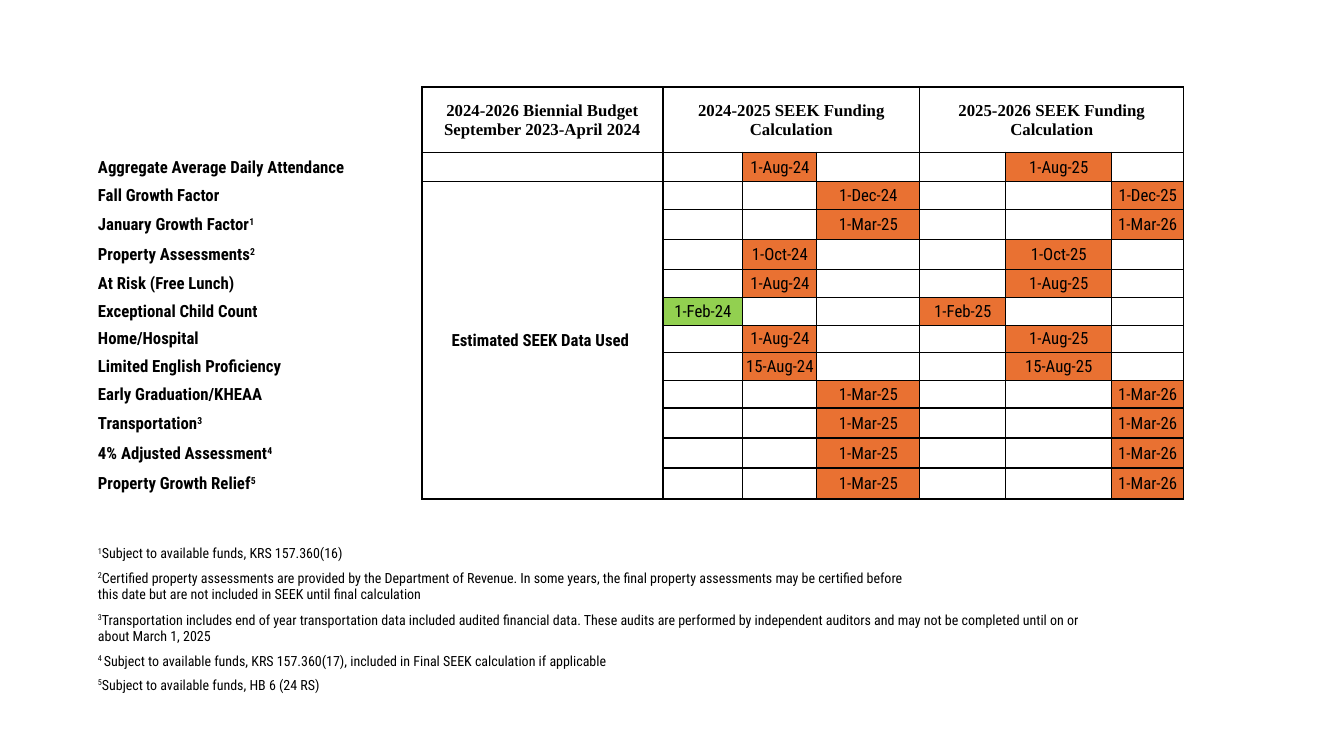
"""Build the SEEK funding calendar slide with its footnotes."""
from lxml.etree import SubElement
from pptx import Presentation
from pptx.dml.color import RGBColor
from pptx.enum.text import MSO_ANCHOR, PP_ALIGN
from pptx.oxml import parse_xml
from pptx.oxml.ns import nsdecls, qn
from pptx.util import Pt

EMU_PER_PX = 914400 / 100.8
BLACK = RGBColor(0x00, 0x00, 0x00)
ORANGE = RGBColor(0xE9, 0x71, 0x32)
GREEN = RGBColor(0x92, 0xD0, 0x50)
NO_STYLE = "{2D5ABB26-0587-4C30-8999-92F81FD0307C}"

COLS = [325, 241, 80, 74, 103, 15, 71, 19, 87, 72]
HEADER_ROWS = [27, 28]
FACTOR_ROWS = [29, 28, 30, 30, 28, 28, 27, 28, 28, 30, 30, 31]
GAP_ROWS = [21, 21]
NOTE_ROWS = [24, 42, 42, 24, 24]
ROWS = HEADER_ROWS + FACTOR_ROWS + GAP_ROWS + NOTE_ROWS
FIRST_FACTOR = len(HEADER_ROWS)
GRID_END = FIRST_FACTOR + len(FACTOR_ROWS)
FIRST_NOTE = GRID_END + len(GAP_ROWS)

HEADERS = [
    (1, 1, ["2024-2026 Biennial Budget", "September 2023-April 2024"]),
    (2, 4, ["2024-2025 SEEK Funding Calculation"]),
    (5, 9, ["2025-2026 SEEK Funding Calculation"]),
]
DATE_COLS = [(2, 5), (3, 7), (4, 9)]
FACTORS = [
    ("Aggregate Average Daily Attendance", "", 1, "1-Aug-24", "1-Aug-25"),
    ("Fall Growth Factor", "", 2, "1-Dec-24", "1-Dec-25"),
    ("January Growth Factor", "1", 2, "1-Mar-25", "1-Mar-26"),
    ("Property Assessments", "2", 1, "1-Oct-24", "1-Oct-25"),
    ("At Risk (Free Lunch)", "", 1, "1-Aug-24", "1-Aug-25"),
    ("Exceptional Child Count", "", 0, "1-Feb-24", "1-Feb-25"),
    ("Home/Hospital", "", 1, "1-Aug-24", "1-Aug-25"),
    ("Limited English Proficiency", "", 1, "15-Aug-24", "15-Aug-25"),
    ("Early Graduation/KHEAA", "", 2, "1-Mar-25", "1-Mar-26"),
    ("Transportation", "3", 2, "1-Mar-25", "1-Mar-26"),
    ("4% Adjusted Assessment", "4", 2, "1-Mar-25", "1-Mar-26"),
    ("Property Growth Relief", "5", 2, "1-Mar-25", "1-Mar-26"),
]
NOTES = [
    ("1", "Subject to available funds, KRS 157.360(16)"),
    ("2", "Certified property assessments are provided by the Department of "
          "Revenue. In some years, the final property assessments may be "
          "certified before this date but are not included in SEEK until "
          "final calculation"),
    ("3", "Transportation includes end of year transportation data included "
          "audited financial data. These audits are performed by independent "
          "auditors and may not be completed until on or about March 1, 2025"),
    ("4 ", "Subject to available funds, KRS 157.360(17), included in Final "
           "SEEK calculation if applicable"),
    ("5", "Subject to available funds, HB 6 (24 RS)"),
]
PAIRS = [(5, 6), (7, 8)]
NOTE_SPANS = [
    PAIRS,
    [(0, 4)] + PAIRS,
    [(0, 8)],
    [(0, 1), (4, 5), (6, 7)],
    [(4, 5), (6, 7)],
]


def px(n):
    return round(n * EMU_PER_PX)


class Deck:
    """Slide builder that holds the text styles and the current slide."""

    STYLES = {
        "header": {"name": "Times New Roman", "size": Pt(12), "bold": True},
        "label": {"name": "Roboto Condensed", "size": Pt(12), "bold": True},
        "date": {"name": "Roboto Condensed", "size": Pt(12), "bold": False},
        "note": {"name": "Roboto Condensed", "size": Pt(10), "bold": False},
    }
    CELL = {"margin_left": px(1), "margin_right": px(1), "margin_top": px(1),
            "margin_bottom": 0, "vertical_anchor": MSO_ANCHOR.MIDDLE}

    def __init__(self, width, height):
        self.prs = Presentation()
        self.prs.slide_width, self.prs.slide_height = px(width), px(height)
        self.slide = self.prs.slides.add_slide(self.prs.slide_layouts[6])

    def table(self, left, top, cols, rows):
        frame = self.slide.shapes.add_table(
            len(rows), len(cols), px(left), px(top), px(sum(cols)), px(sum(rows)))
        table = frame.table
        table.first_row = table.horz_banding = False
        table._tbl.tblPr.find(qn("a:tableStyleId")).text = NO_STYLE
        for col, width in zip(table.columns, cols):
            col.width = px(width)
        for row, height in zip(table.rows, rows):
            row.height = px(height)
        for cell in table.iter_cells():
            for key, value in self.CELL.items():
                setattr(cell, key, value)
            cell.fill.background()
            end = SubElement(cell.text_frame.paragraphs[0]._p, qn("a:endParaRPr"))
            end.set("sz", "1000")
        return table

    def merge(self, table, r1, c1, r2, c2):
        table.cell(r1, c1).merge(table.cell(r2, c2))

    def text(self, cell, paragraphs, style, align=PP_ALIGN.CENTER):
        tf = cell.text_frame
        for i, runs in enumerate(paragraphs):
            p = tf.add_paragraph() if i else tf.paragraphs[0]
            p.alignment = align
            for words, raised in runs:
                if not words:
                    continue
                r = p.add_run()
                r.text = words
                r.font.color.rgb = BLACK
                for key, value in self.STYLES[style].items():
                    setattr(r.font, key, value)
                if raised:
                    r._r.get_or_add_rPr().set("baseline", "30000")

    def fill(self, cell, color):
        cell.fill.solid()
        cell.fill.fore_color.rgb = color

    def border(self, cell, sides):
        tc_pr = cell._tc.get_or_add_tcPr()
        solid = f'<a:solidFill><a:srgbClr val="{BLACK}"/></a:solidFill>'
        for i, side in enumerate("LRTB"):
            paint = solid if side in sides else "<a:noFill/>"
            tc_pr.insert(i, parse_xml(
                f'<a:ln{side} {nsdecls("a")} w="12700">{paint}</a:ln{side}>'))

    def save(self):
        self.prs.save("out.pptx")


def border_sides(row, col):
    if row < GRID_END:
        return "LRTB" if col else "R"
    return "T" if row == GRID_END and col else ""


def main():
    deck = Deck(1344, 756)
    table = deck.table(97, 87, COLS, ROWS)

    for first, last, lines in HEADERS:
        deck.merge(table, 0, first, FIRST_FACTOR - 1, last)
        deck.text(table.cell(0, first), [[(s, False)] for s in lines], "header")

    for row, (label, mark, slot, *dates) in enumerate(FACTORS, FIRST_FACTOR):
        deck.text(table.cell(row, 0), [[(label, False), (mark, True)]],
                  "label", PP_ALIGN.LEFT)
        for col, date in zip(DATE_COLS[slot], dates):
            cell = table.cell(row, col)
            deck.text(cell, [[(date, False)]], "date")
            deck.fill(cell, GREEN if date == "1-Feb-24" else ORANGE)

    deck.merge(table, FIRST_FACTOR + 1, 1, GRID_END - 1, 1)
    deck.text(table.cell(FIRST_FACTOR + 1, 1),
              [[("Estimated SEEK Data Used ", False)]], "label")

    for row in range(FIRST_FACTOR, FIRST_NOTE):
        for first, last in PAIRS:
            deck.merge(table, row, first, row, last)

    for row, ((mark, words), spans) in enumerate(zip(NOTES, NOTE_SPANS), FIRST_NOTE):
        for first, last in spans:
            deck.merge(table, row, first, row, last)
        deck.text(table.cell(row, 0), [[(mark, True), (words, False)]],
                  "note", PP_ALIGN.LEFT)

    for row in range(len(ROWS)):
        for col in range(len(COLS)):
            deck.border(table.cell(row, col), border_sides(row, col))

    deck.save()


if __name__ == "__main__":
    main()
